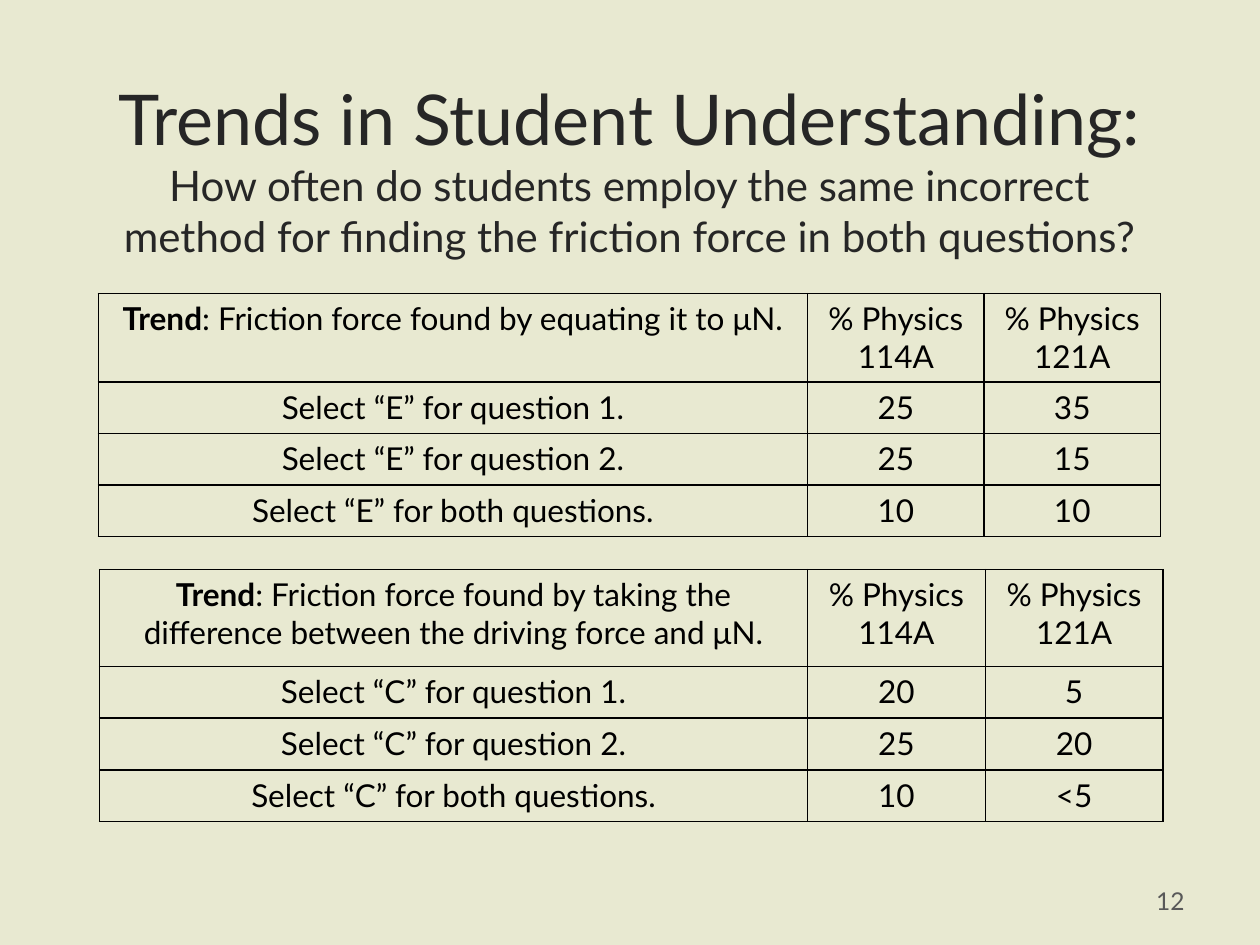
from dataclasses import dataclass

from lxml import etree
from pptx import Presentation
from pptx.dml.color import RGBColor
from pptx.enum import text
from pptx.oxml import ns
from pptx.util import Inches, Pt

FONT = "Lato"
COLORS = {"background": "E8E9D1", "title": "262626", "table": "000000", "number": "595959"}
COURSES = ["% Physics 114A", "% Physics 121A"]
HEADER_HEIGHT, ROW_HEIGHT = 0.7, 0.41


@dataclass
class Run:
    text: str
    size: float
    color: str
    bold: bool = False


@dataclass
class TrendTable:
    left: float
    top: float
    widths: list[float]
    header_height: float
    trend: str
    answer: str
    percentages: list[tuple[str, str]]


TRENDS = [
    TrendTable(0.78, 2.33, [5.63, 1.4, 1.4], HEADER_HEIGHT,
               "Friction force found by equating it to μN.",
               "E", [("25", "35"), ("25", "15"), ("10", "10")]),
    TrendTable(0.79, 4.52, [5.62, 1.41, 1.41], 0.77,
               "Friction force found by taking the difference between the driving force and μN.",
               "C", [("20", "5"), ("25", "20"), ("10", "<5")]),
]


def write_runs(frame, runs: list[Run], alignment) -> None:
    paragraph = frame.paragraphs[0]
    paragraph.alignment = alignment
    for item in runs:
        run = paragraph.add_run()
        run.text = item.text
        run.font.name = FONT
        run.font.size = Pt(item.size)
        run.font.bold = item.bold
        run.font.color.rgb = RGBColor.from_string(COLORS[item.color])


def add_text(slide, box: tuple[float, ...], runs: list[Run], alignment) -> None:
    frame = slide.shapes.add_textbox(*map(Inches, box)).text_frame
    frame.word_wrap = True
    frame.vertical_anchor = text.MSO_ANCHOR.MIDDLE
    write_runs(frame, runs, alignment)


def add_borders(cell) -> None:
    properties = cell._tc.get_or_add_tcPr()
    for position, side in enumerate(("lnL", "lnR", "lnT", "lnB")):
        line = etree.Element(ns.qn(f"a:{side}"), w=str(Pt(1)))
        fill = etree.SubElement(line, ns.qn("a:solidFill"))
        etree.SubElement(fill, ns.qn("a:srgbClr"), val=COLORS["table"])
        properties.insert(position, line)


def add_trend_table(slide, trend: TrendTable) -> None:
    questions = ["question 1", "question 2", "both questions"]
    rows = [[f"Trend: {trend.trend}", *COURSES]]
    for question, values in zip(questions, trend.percentages):
        rows.append([f"Select “{trend.answer}” for {question}.", *values])
    heights = [trend.header_height] + [ROW_HEIGHT] * len(questions)

    frame = slide.shapes.add_table(
        len(rows), len(trend.widths), Inches(trend.left), Inches(trend.top),
        Inches(sum(trend.widths)), Inches(sum(heights)))
    table = frame.table
    table.first_row = table.horz_banding = False
    for column, width in zip(table.columns, trend.widths):
        column.width = Inches(width)
    for row, height, values in zip(table.rows, heights, rows):
        row.height = Inches(height)
        for cell, value in zip(row.cells, values):
            cell.fill.background()
            add_borders(cell)
            label, colon, rest = value.partition(":")
            runs = [Run(label, 18, "table", bold=bool(colon))]
            if colon:
                runs.append(Run(colon + rest, 18, "table"))
            write_runs(cell.text_frame, runs, text.PP_ALIGN.CENTER)


def main() -> None:
    presentation = Presentation()
    presentation.slide_width, presentation.slide_height = Inches(10), Inches(7.5)
    slide = presentation.slides.add_slide(presentation.slide_layouts[6])
    slide.background.fill.solid()
    slide.background.fill.fore_color.rgb = RGBColor.from_string(COLORS["background"])

    # Title and its question
    add_text(slide, (0.79, 0.71, 8.41, 1.25), [
        Run("Trends in Student Understanding: ", 40, "title"),
        Run("How often do students employ the same incorrect method "
            "for finding the friction force in both questions?", 24, "title"),
    ], text.PP_ALIGN.CENTER)

    # One table for each trend
    for trend in TRENDS:
        add_trend_table(slide, trend)

    # Slide number
    add_text(slide, (7.17, 6.95, 2.33, 0.4), [Run("12", 14, "number")], text.PP_ALIGN.RIGHT)

    presentation.save("out.pptx")


if __name__ == "__main__":
    main()
